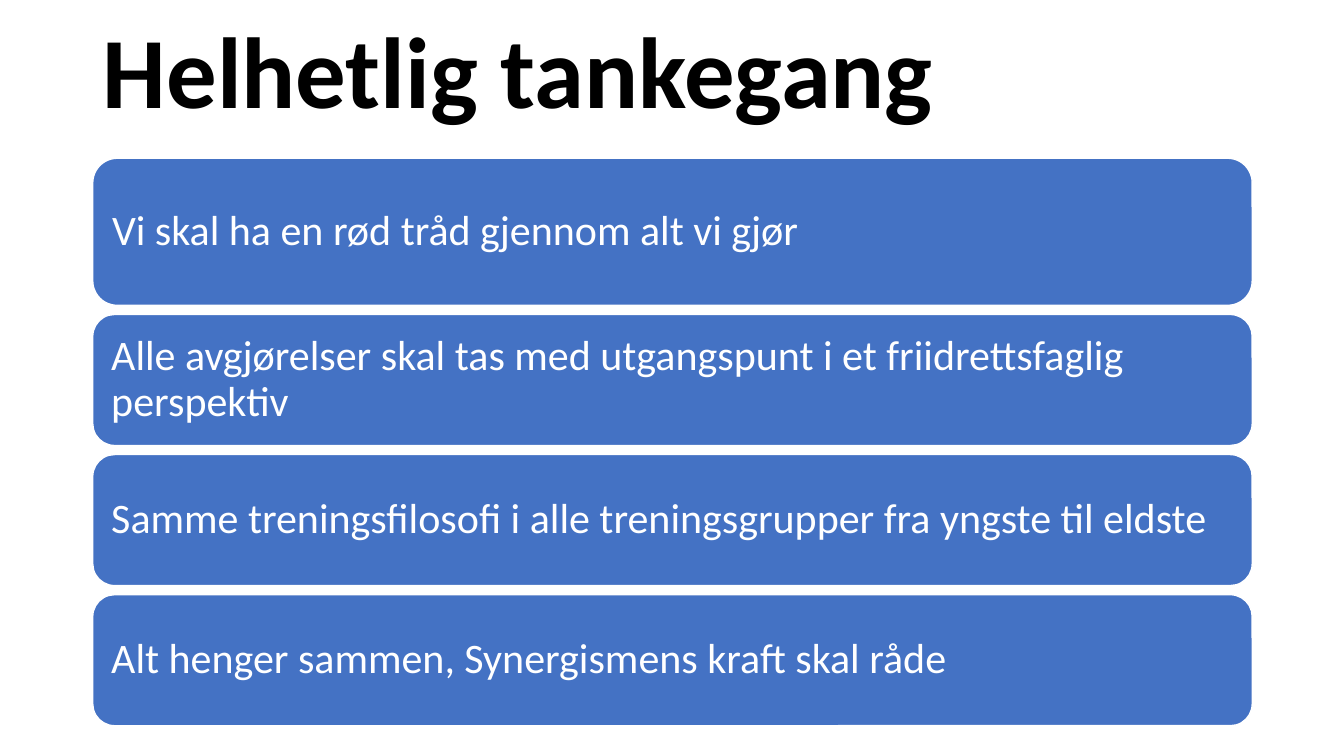
from pptx import Presentation
from pptx.dml.color import RGBColor
from pptx.enum.shapes import MSO_SHAPE
from pptx.enum.text import MSO_ANCHOR, MSO_AUTO_SIZE, PP_ALIGN
from pptx.util import Inches, Pt

BLACK = RGBColor(0x00, 0x00, 0x00)
WHITE = RGBColor(0xFF, 0xFF, 0xFF)
BLUE = RGBColor(0x44, 0x72, 0xC4)

PRINCIPLES = [
    ("Vi skal ha en rød tråd gjennom alt vi gjør", 1.46),
    ("Alle avgjørelser skal tas med utgangspunt i et friidrettsfaglig perspektiv", 1.3),
    ("Samme treningsfilosofi i alle treningsgrupper fra yngste til eldste", 1.3),
    ("Alt henger sammen, Synergismens kraft skal råde", 1.3),
]


def write_text(shape, text, size, color, bold=False, inset=0.1):
    """Fill a shape with one left-aligned, vertically centred paragraph."""
    frame = shape.text_frame
    frame.word_wrap = True
    frame.auto_size = MSO_AUTO_SIZE.NONE
    frame.vertical_anchor = MSO_ANCHOR.MIDDLE
    frame.margin_left = frame.margin_right = Inches(inset)
    frame.margin_top = frame.margin_bottom = Inches(inset)
    para = frame.paragraphs[0]
    para.alignment = PP_ALIGN.LEFT
    para.line_spacing = 0.9
    span = para.add_run()
    span.text = text
    span.font.name = "Calibri"
    span.font.size = Pt(size)
    span.font.bold = bold
    span.font.color.rgb = color


def place_title(page, text, left, top, width, height):
    """Move and format the title placeholder."""
    title = page.shapes.title
    title.left, title.top = Inches(left), Inches(top)
    title.width, title.height = Inches(width), Inches(height)
    write_text(title, text, size=72, color=BLACK, bold=True)


def add_principles(page, principles, left, top, width, gap):
    """Stack one rounded box per principle downwards from the top."""
    for text, height in principles:
        box = page.shapes.add_shape(
            MSO_SHAPE.ROUNDED_RECTANGLE,
            Inches(left), Inches(top), Inches(width), Inches(height),
        )
        box.shadow.inherit = False
        box.fill.solid()
        box.fill.fore_color.rgb = BLUE
        box.line.color.rgb = WHITE
        box.line.width = Pt(1)
        write_text(box, text, size=30, color=WHITE, inset=0.12)
        top += height + gap


def main():
    """Build and save the deck."""
    deck = Presentation()
    deck.slide_width, deck.slide_height = Inches(13.33), Inches(7.5)
    page = deck.slides.add_slide(deck.slide_layouts[5])
    place_title(page, "Helhetlig tankegang", left=0.92, top=0.27, width=11.5, height=0.97)
    add_principles(page, PRINCIPLES, left=0.92, top=1.57, width=11.5, gap=0.09)
    deck.save("out.pptx")


if __name__ == "__main__":
    main()
